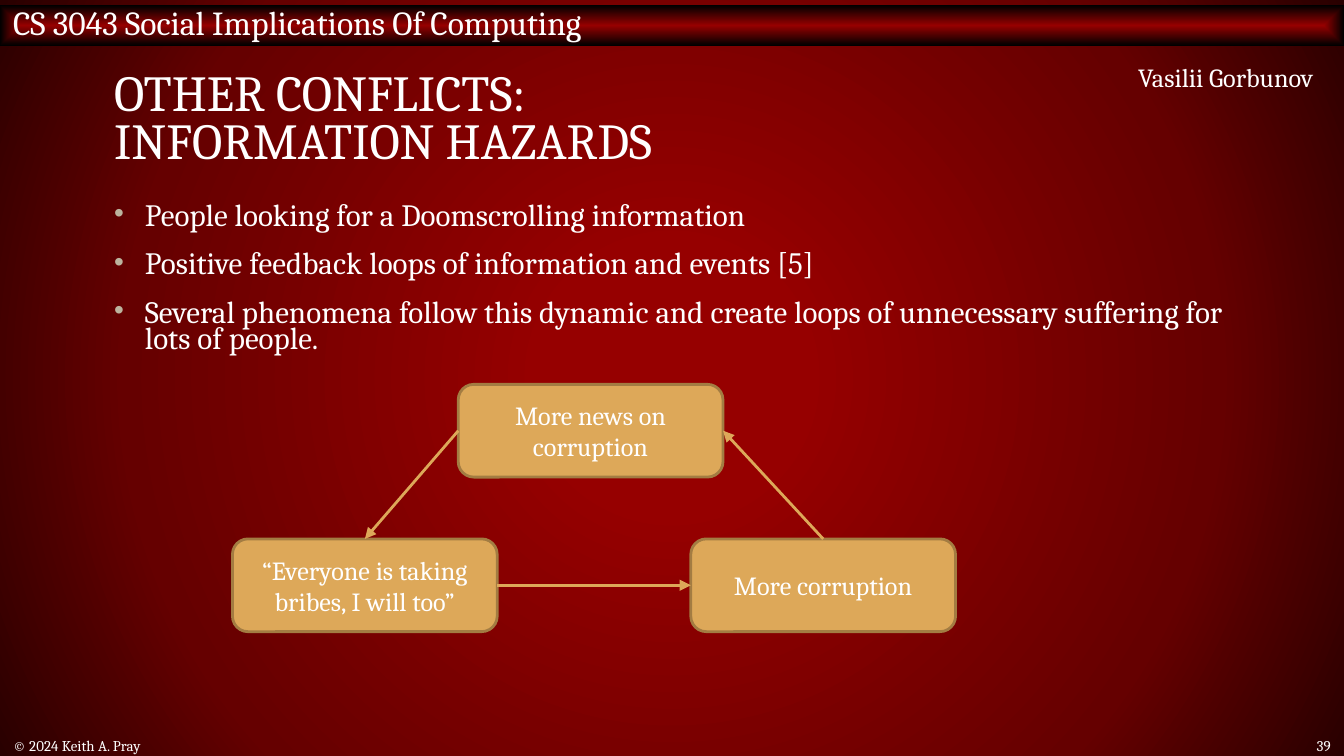
"""Build the information hazards slide with its corruption feedback loop."""
from copy import deepcopy
from dataclasses import dataclass

from lxml import etree
from pptx import Presentation
from pptx.dml.color import RGBColor
from pptx.enum.shapes import MSO_CONNECTOR, MSO_SHAPE
from pptx.enum.text import MSO_ANCHOR, MSO_AUTO_SIZE, PP_ALIGN
from pptx.oxml import parse_xml
from pptx.oxml.ns import nsdecls, qn
from pptx.util import Inches, Pt

LEFT, CENTER, RIGHT = PP_ALIGN.LEFT, PP_ALIGN.CENTER, PP_ALIGN.RIGHT
TOP, MIDDLE = MSO_ANCHOR.TOP, MSO_ANCHOR.MIDDLE
RECTANGLE, ROUNDED = MSO_SHAPE.RECTANGLE, MSO_SHAPE.ROUNDED_RECTANGLE
STRAIGHT = MSO_CONNECTOR.STRAIGHT
NO_AUTOFIT = MSO_AUTO_SIZE.NONE
TOP_SIDE, LEFT_SIDE, RIGHT_SIDE = 0, 1, 3

SLIDE_WIDTH = 10
SLIDE_HEIGHT = SLIDE_WIDTH * 9 / 16
FONT = "Cambria"
WHITE, GOLD, BRONZE, BULLET = "FFFFFF", "DDA859", "A37C42", "BCB49E"
STEP_WIDTH, STEP_HEIGHT = 1.97, 0.69
FOOTER_HEIGHT = 0.16
FOOTER_TOP = SLIDE_HEIGHT - FOOTER_HEIGHT


@dataclass(frozen=True)
class Step:
    text: str
    left: float
    top: float


@dataclass(frozen=True)
class Link:
    source: int
    source_side: int
    target: int
    target_side: int


POINTS = [
    "People looking for a Doomscrolling information",
    "Positive feedback loops of information and events [5]",
    "Several phenomena follow this dynamic and create loops of unnecessary "
    "suffering for lots of people.",
]
STEPS = [
    Step("More news on corruption", 3.41, 2.86),
    Step("“Everyone is taking bribes, I will too”", 1.73, 4.01),
    Step("More corruption", 5.14, 4.01),
]
LINKS = [
    Link(0, LEFT_SIDE, 1, TOP_SIDE),
    Link(1, RIGHT_SIDE, 2, LEFT_SIDE),
    Link(2, TOP_SIDE, 0, RIGHT_SIDE),
]


def rgb(color: str) -> RGBColor:
    return RGBColor.from_string(color)


def set_path_gradient(fill, root, kind: str, stops: list[tuple[int, str]]) -> None:
    fill.gradient()
    gradient = next(root.iter(qn("a:gradFill")))
    stop_xml = "".join(
        f'<a:gs pos="{percent * 1000}"><a:srgbClr val="{color}"/></a:gs>'
        for percent, color in stops
    )
    gradient.getparent().replace(gradient, parse_xml(
        f'<a:gradFill {nsdecls("a")} rotWithShape="1"><a:gsLst>{stop_xml}</a:gsLst>'
        f'<a:path path="{kind}"><a:fillToRect l="50000" t="50000" r="50000" '
        f'b="50000"/></a:path></a:gradFill>'
    ))


def add_bullet(paragraph) -> None:
    properties = paragraph._p.get_or_add_pPr()
    properties.set("marL", str(Inches(0.23)))
    properties.set("indent", str(Inches(-0.23)))
    color = etree.SubElement(properties, qn("a:buClr"))
    etree.SubElement(color, qn("a:srgbClr"), val=BULLET)
    etree.SubElement(properties, qn("a:buSzPct"), val="90000")
    etree.SubElement(properties, qn("a:buFont"), typeface="Arial")
    etree.SubElement(properties, qn("a:buChar"), char="•")


def write(shape, *texts: str, size: float, align=LEFT, anchor=MIDDLE, line_spacing=None,
          gap: float = 0, inset_top: float = 0.05, bulleted: bool = False) -> None:
    frame = shape.text_frame
    frame.word_wrap = True
    frame.auto_size = NO_AUTOFIT
    frame.vertical_anchor = anchor
    frame.margin_left = frame.margin_right = Inches(0.1)
    frame.margin_top, frame.margin_bottom = Inches(inset_top), Inches(0.05)
    for index, text in enumerate(texts):
        paragraph = frame.add_paragraph() if index else frame.paragraphs[0]
        paragraph.text = text
        if bulleted:
            add_bullet(paragraph)
        paragraph.alignment = align
        paragraph.line_spacing = line_spacing
        paragraph.space_before = Pt(gap if index else 0)
        for run in paragraph.runs:
            run.font.name, run.font.size = FONT, Pt(size)
            run.font.color.rgb = rgb(WHITE)
        for line_break in paragraph._p.findall(qn("a:br")):
            line_break.append(deepcopy(paragraph.runs[0]._r.rPr))


def add_box(slide, left: float, top: float, width: float, height: float):
    return slide.shapes.add_textbox(
        Inches(left), Inches(top), Inches(width), Inches(height))


def add_shape(slide, kind, left: float, top: float, width: float, height: float):
    shape = slide.shapes.add_shape(
        kind, Inches(left), Inches(top), Inches(width), Inches(height))
    shape.shadow.inherit = False
    return shape


def add_step(slide, step: Step):
    shape = add_shape(slide, ROUNDED, step.left, step.top, STEP_WIDTH, STEP_HEIGHT)
    shape.fill.solid()
    shape.fill.fore_color.rgb = rgb(GOLD)
    shape.line.color.rgb = rgb(BRONZE)
    shape.line.width = Pt(1.5)
    write(shape, step.text, size=14, align=CENTER)
    return shape


def add_link(slide, link: Link, boxes: list) -> None:
    arrow = slide.shapes.add_connector(STRAIGHT, 0, 0, 0, 0)
    arrow.begin_connect(boxes[link.source], link.source_side)
    arrow.end_connect(boxes[link.target], link.target_side)
    arrow.line.color.rgb = rgb(GOLD)
    arrow.line.width = Pt(1.5)
    etree.SubElement(arrow.line._get_or_add_ln(), qn("a:tailEnd"), type="triangle")
    etree.SubElement(arrow._element.spPr, qn("a:effectLst"))


def main() -> None:
    deck = Presentation()
    deck.slide_width, deck.slide_height = Inches(SLIDE_WIDTH), Inches(SLIDE_HEIGHT)
    slide = deck.slides.add_slide(deck.slide_layouts[5])
    set_path_gradient(slide.background.fill, slide.element, "circle",
                      [(17, "960000"), (71, "650000"), (100, "290000")])

    course = add_shape(slide, RECTANGLE, 0, 0.04, SLIDE_WIDTH, 0.3)
    set_path_gradient(course.fill, course.element, "shape",
                      [(0, "960000"), (100, "000000")])
    course.line.fill.background()
    write(course, "CS 3043 Social Implications Of Computing", size=18, inset_top=0)

    title = slide.shapes.title
    title.left, title.top = Inches(0.75), Inches(0.4)
    title.width, title.height = Inches(8.5), Inches(1)
    write(title, "OTHER CONFLICTS:\vINFORMATION HAZARDS", size=27, line_spacing=0.8)

    write(add_box(slide, 0.75, 1.48, 8.78, 1.28), *POINTS, size=16.65, anchor=TOP,
          line_spacing=0.7, gap=12, bulleted=True)
    write(add_box(slide, 0, FOOTER_TOP, 6.08, FOOTER_HEIGHT),
          "© 2024 Keith A. Pray", size=8)
    write(add_box(slide, 9.32, FOOTER_TOP, 0.68, FOOTER_HEIGHT), "39", size=8,
          align=RIGHT)
    write(add_box(slide, 7.49, 0.41, 2.38, 0.34), "Vasilii Gorbunov", size=14,
          align=RIGHT, anchor=TOP)

    boxes = [add_step(slide, step) for step in STEPS]
    for link in LINKS:
        add_link(slide, link, boxes)
    deck.save("out.pptx")


if __name__ == "__main__":
    main()
